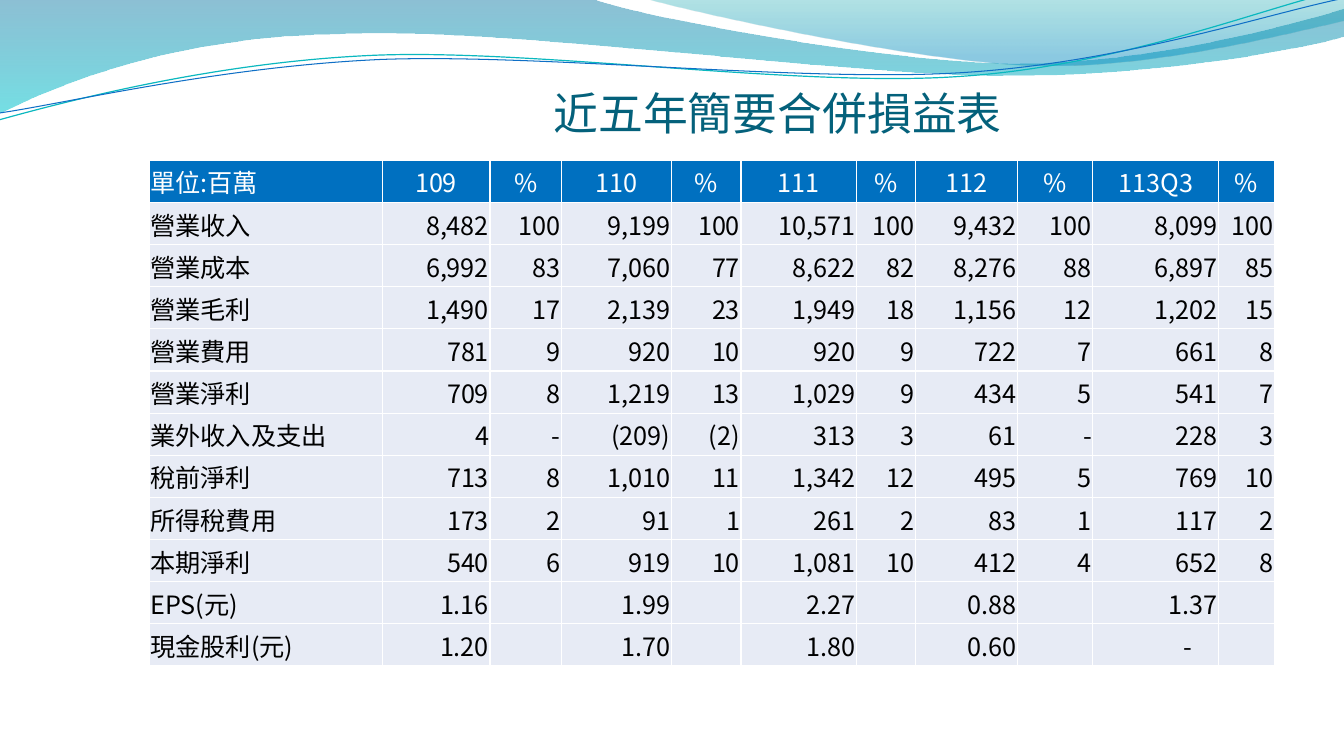
import math

from lxml import etree
from pptx import Presentation
from pptx import util as u
from pptx.dml import color
from pptx.enum import text
from pptx.oxml import ns

PX = 9144
FONT = "Noto Sans CJK SC"
WHITE, BLACK, BLUE, PALE, TEAL = "FFFFFF", "000000", "0070C0", "E7EBF5", "04617B"
LEFT, CENTER, RIGHT = text.PP_ALIGN.LEFT, text.PP_ALIGN.CENTER, text.PP_ALIGN.RIGHT

COLUMNS = [231, 107, 71, 109, 69, 115, 58, 101, 75, 125, 55]
ROWS = [
    ["單位:百萬", "109", "%", "110", "%", "111", "%", "112", "%", "113Q3", "%"],
    ["營業收入", "8,482", "100", "9,199", "100", "10,571", "100", "9,432", "100", "8,099", "100"],
    ["營業成本", "6,992", "83", "7,060", "77", "8,622", "82", "8,276", "88", "6,897", "85"],
    ["營業毛利", "1,490", "17", "2,139", "23", "1,949", "18", "1,156", "12", "1,202", "15"],
    ["營業費用", "781", "9", "920", "10", "920", "9", "722", "7", "661", "8"],
    ["營業淨利", "709", "8", "1,219", "13", "1,029", "9", "434", "5", "541", "7"],
    ["業外收入及支出", "4", "-", "(209)", "(2)", "313", "3", "61", "-", "228", "3"],
    ["稅前淨利", "713", "8", "1,010", "11", "1,342", "12", "495", "5", "769", "10"],
    ["所得稅費用", "173", "2", "91", "1", "261", "2", "83", "1", "117", "2"],
    ["本期淨利", "540", "6", "919", "10", "1,081", "10", "412", "4", "652", "8"],
    ["EPS(元)", "1.16", "", "1.99", "", "2.27", "", "0.88", "", "1.37", ""],
    ["現金股利(元)", "1.20", "", "1.70", "", "1.80", "", "0.60", "", "-　", ""],
]

BAND = [[(0, 0)], [(587, -1)], [(634, 17), (885, 63), (1011, 63)],
        [(1138, 63), (1278, 26), (1333, 9)], [(1335, 36)],
        [(1311, 44), (1160, 76), (994, 75)], [(829, 75), (509, 28), (343, 34)],
        [(172, 36), (61, 83), (-1, 113)]]
CREST = [[(639, -1)], [(679, 11), (909, 62), (1025, 65)],
         [(1141, 69), (1282, 32), (1333, 21)], [(1333, 0)]]
TEAL_WAVE = [[(-1, 119)], [(64, 101), (211, 62), (369, 55)],
             [(527, 48), (790, 87), (950, 76)], [(1110, 66), (1252, 8), (1331, -10)]]
BLUE_WAVE = [[(0, 112)], [(63, 103), (218, 66), (378, 59)],
             [(537, 53), (796, 82), (955, 72)], [(1115, 62), (1255, 14), (1334, -2)]]
WAVE_TILT = 2.7
WAVE_CENTER = (666, 58)


def rgb(value):
    """Turn a hex string into a colour."""
    return color.RGBColor.from_string(value)


def turn(point, degrees, center):
    """Rotate a point clockwise around a center."""
    a = math.radians(degrees)
    x, y = point[0] - center[0], point[1] - center[1]
    return (center[0] + x * math.cos(a) - y * math.sin(a),
            center[1] + x * math.sin(a) + y * math.cos(a))


def add_outline(s, segments, close):
    """Add a freeform whose three-point segments are Bezier curves."""
    start, *rest = [(round(x * PX), round(y * PX)) for seg in segments for x, y in seg]
    builder = s.shapes.build_freeform(*start)
    builder.add_line_segments(rest, close=close)
    sp = builder.convert_to_shape()
    sp.shadow.inherit = False
    lines = list(sp._element.iter(ns.qn("a:lnTo")))
    for seg in segments[1:]:
        first, *others = lines[:len(seg)]
        lines = lines[len(seg):]
        if others:
            curve = etree.Element(ns.qn("a:cubicBezTo"))
            first.addprevious(curve)
            for line in (first, *others):
                curve.append(line[0])
                line.getparent().remove(line)
    return sp


def add_swoosh(s, segments, stops):
    """Add a closed freeform with a translucent gradient from top to bottom."""
    sp = add_outline(s, segments, True)
    sp.line.fill.background()
    sp.fill.gradient()
    sp.fill.gradient_angle = 270
    for stop, (position, value, opacity) in zip(sp.fill.gradient_stops, stops):
        stop.position = position
        stop.color.rgb = rgb(value)
        clr = stop._gs.find(ns.qn("a:srgbClr"))
        etree.SubElement(clr, ns.qn("a:alpha"), val=str(opacity * 1000))


def add_wave(s, segments, value, width):
    """Add an open curved line, tilted as a whole."""
    level = [[turn(point, WAVE_TILT, WAVE_CENTER) for point in seg] for seg in segments]
    sp = add_outline(s, level, False)
    sp.rotation = -WAVE_TILT
    sp.fill.background()
    sp.line.color.rgb = rgb(value)
    sp.line.width = u.Pt(width)


def write(p, words, size, value, align):
    """Fill a paragraph and set its font."""
    p.text = words
    p.alignment = align
    p.font.size = u.Pt(size)
    p.font.color.rgb = rgb(value)
    p.font.name = FONT
    etree.SubElement(p.font._rPr, ns.qn("a:ea"), typeface=FONT)


def add_title(s, words, x, y, w, h):
    """Add the centred heading."""
    tf = s.shapes.add_textbox(x * PX, y * PX, w * PX, h * PX).text_frame
    tf.word_wrap = True
    tf.vertical_anchor = text.MSO_ANCHOR.BOTTOM
    tf.margin_left = tf.margin_right = tf.margin_bottom = 0
    tf.margin_top = 5 * PX
    write(tf.paragraphs[0], words, 32, TEAL, CENTER)


def add_borders(cell):
    """Draw thin white lines on all sides of a cell."""
    for side in ("lnL", "lnR", "lnT", "lnB"):
        ln = etree.SubElement(cell._tc.get_or_add_tcPr(), ns.qn(f"a:{side}"), w=str(u.Pt(1)))
        fill = etree.SubElement(ln, ns.qn("a:solidFill"))
        etree.SubElement(fill, ns.qn("a:srgbClr"), val=WHITE)


def add_income_table(s, x, y, h):
    """Add the income statement."""
    frame = s.shapes.add_table(len(ROWS), len(COLUMNS), x * PX, y * PX, sum(COLUMNS) * PX, h * PX)
    table = frame.table
    for column, width in zip(table.columns, COLUMNS):
        column.width = width * PX
    for i, row in enumerate(ROWS):
        for j, words in enumerate(row):
            cell = table.cell(i, j)
            add_borders(cell)
            cell.fill.solid()
            cell.fill.fore_color.rgb = rgb(PALE if i else BLUE)
            cell.vertical_anchor = text.MSO_ANCHOR.MIDDLE
            cell.margin_left = cell.margin_right = cell.margin_top = PX
            cell.margin_bottom = 0
            align = LEFT if j == 0 else RIGHT if i else CENTER
            if words:
                write(cell.text_frame.paragraphs[0], words, 18, BLACK if i else WHITE, align)


def main():
    """Build the slide and save it."""
    prs = Presentation()
    prs.slide_width, prs.slide_height = u.Inches(13.33), u.Inches(7.5)
    s = prs.slides.add_slide(prs.slide_layouts[6])
    add_swoosh(s, BAND, [(0, "0074A1", 45), (1, "00C6CF", 55)])
    add_swoosh(s, CREST, [(0, "00A1A9", 30), (0.8, "008BBF", 45)])
    add_wave(s, TEAL_WAVE, "0AB8BF", 0.85)
    add_wave(s, BLUE_WAVE, "0F6FC6", 0.75)
    add_title(s, "近五年簡要合併損益表", 284, 68, 975, 70)
    add_income_table(s, 148, 159, 502)
    prs.save("out.pptx")


if __name__ == "__main__":
    main()
